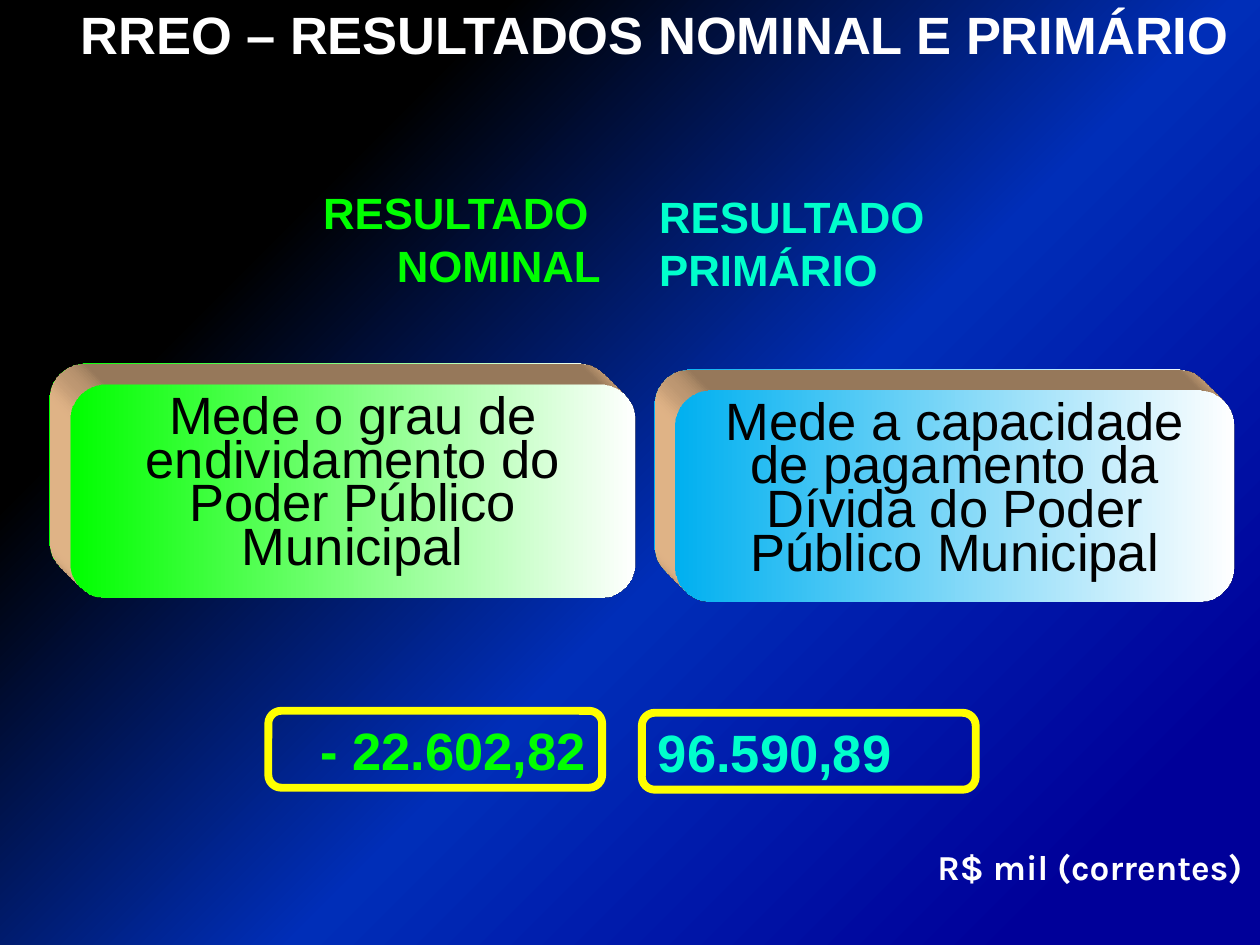
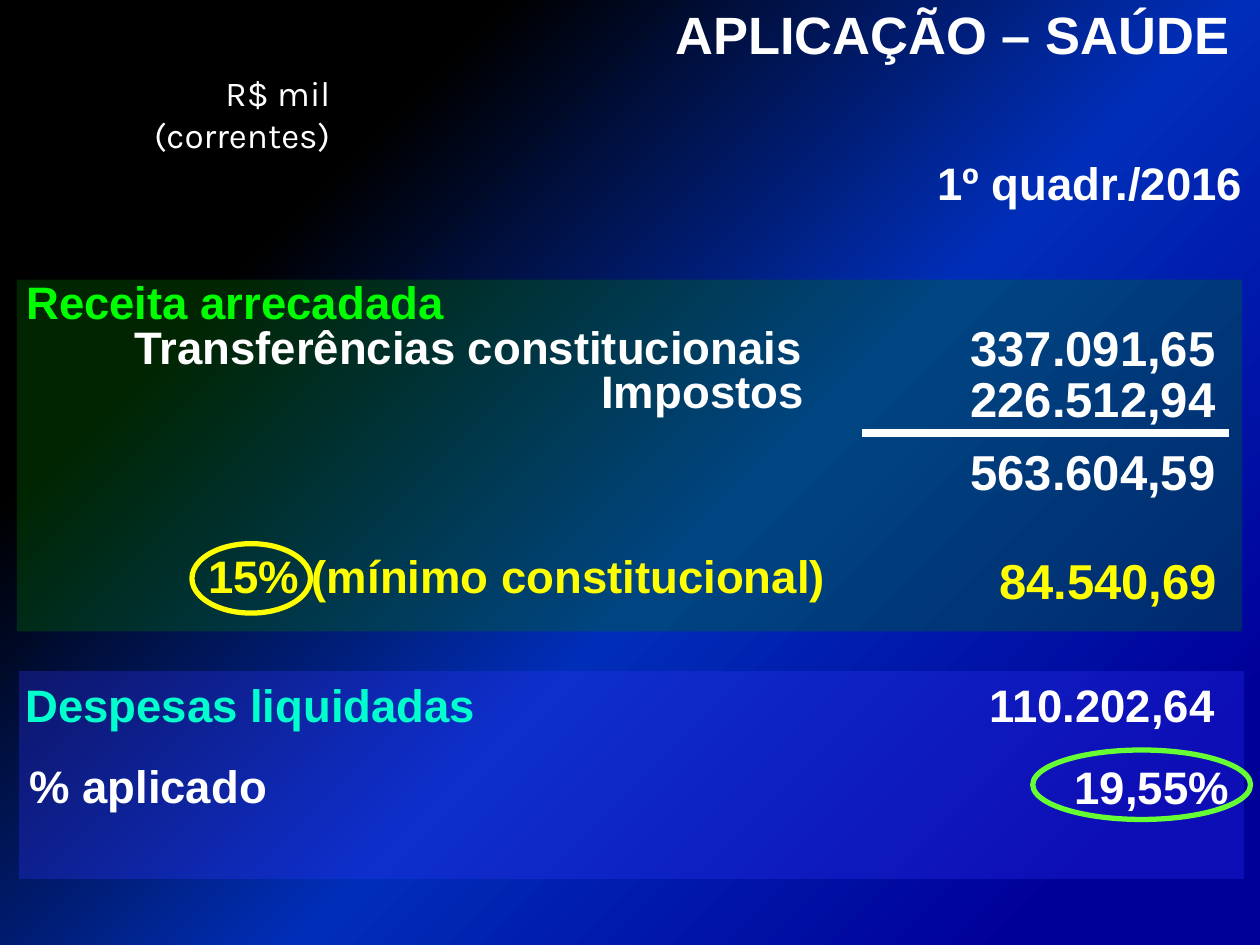
from lxml import etree
from pptx import Presentation
from pptx import util as u
from pptx.dml.color import RGBColor
from pptx.enum import shapes, text as t
from pptx.oxml import ns

COLORS = {
    "white": "FFFFFF", "black": "000000", "yellow": "FFFF00",
    "green": "00FF00", "aqua": "00FFCC", "sky": "00B0F0",
    "lime": "66FF33", "dark_green": "008000", "violet": "3333FF",
    "blue": "002EB8", "navy": "000099", "peach": "FFCC99",
}
CORNER = 0.167


def add_child(parent, tag, **attributes):
    return etree.SubElement(parent, ns.qn(tag), **attributes)


def set_gradient(fill, element, stops, angle=0):
    fill.gradient()
    fill.gradient_angle = angle
    stop_list = element.find(".//" + ns.qn("a:gsLst"))
    for stop in list(stop_list):
        stop_list.remove(stop)
    for position, color in stops:
        stop = add_child(stop_list, "a:gs", pos=str(position * 1000))
        add_child(stop, "a:srgbClr", val=COLORS[color])


def extrude(shape, depth, color):
    properties = shape.element.spPr
    scene = add_child(properties, "a:scene3d")
    add_child(scene, "a:camera", prst="legacyObliqueTopLeft")
    add_child(scene, "a:lightRig", rig="legacyFlat3", dir="b")
    body = add_child(properties, "a:sp3d", extrusionH=str(depth),
                     prstMaterial="legacyMatte")
    for bevel in ("a:bevelT", "a:bevelB"):
        add_child(body, bevel, w="13500", h="13500", prst="angle")
    side = add_child(body, "a:extrusionClr")
    add_child(side, "a:srgbClr", val=COLORS[color])


def write_text(frame, text, size=26, color="white", bold=True, font="Arial",
               align="LEFT", anchor="TOP", wrap=True, spacing=None, fit="NONE"):
    frame.word_wrap = wrap
    frame.auto_size = getattr(t.MSO_AUTO_SIZE, fit)
    frame.vertical_anchor = getattr(t.MSO_ANCHOR, anchor)
    for index, line in enumerate(text.split("\n")):
        paragraph = frame.add_paragraph() if index else frame.paragraphs[0]
        paragraph.alignment = getattr(t.PP_ALIGN, align)
        if spacing:
            paragraph.line_spacing = spacing
        run = paragraph.add_run()
        run.text = line
        run.font.name = font
        run.font.size = u.Pt(size)
        run.font.bold = bold
        run.font.color.rgb = RGBColor.from_string(COLORS[color])


class Deck:
    def __init__(self):
        self.presentation = Presentation()
        self.presentation.slide_width = u.Cm(25.4)
        self.presentation.slide_height = u.Cm(19.05)
        master = self.presentation.slide_master
        set_gradient(master.background.fill, master.element,
                     [(23, "black"), (56, "blue"), (89, "navy")], 315)
        self.slide = None

    def new_slide(self, title):
        layout = self.presentation.slide_layouts.get_by_name("Title Only")
        self.slide = self.presentation.slides.add_slide(layout)
        shape = self.slide.shapes.title
        shape.left, shape.top = u.Cm(0), u.Cm(-0.08)
        shape.width, shape.height = u.Cm(25.04), u.Cm(1.55)
        write_text(shape.text_frame, title, size=30, align="RIGHT")

    def text(self, box, text, **style):
        shape = self.slide.shapes.add_textbox(*map(u.Cm, box))
        write_text(shape.text_frame, text, fit="SHAPE_TO_FIT_TEXT", **style)

    def shape(self, kind, box, fill=None, alpha=None, line=None, width=3):
        shape = self.slide.shapes.add_shape(
            getattr(shapes.MSO_SHAPE, kind), *map(u.Cm, box))
        shape.shadow.inherit = False
        if kind == "ROUNDED_RECTANGLE":
            shape.adjustments[0] = CORNER
        if fill:
            shape.fill.solid()
            shape.fill.fore_color.rgb = RGBColor.from_string(COLORS[fill])
        else:
            shape.fill.background()
        if alpha:
            color = shape.element.spPr.find(".//" + ns.qn("a:srgbClr"))
            add_child(color, "a:alpha", val=str(alpha * 1000))
        if line:
            shape.line.color.rgb = RGBColor.from_string(COLORS[line])
            shape.line.width = u.Pt(width)
        else:
            shape.line.fill.background()
        return shape

    def label(self, box, text, line=None, **style):
        shape = self.shape("ROUNDED_RECTANGLE", box, line=line, width=4.5)
        write_text(shape.text_frame, text, anchor="MIDDLE", wrap=False, **style)

    def card(self, box, text, color):
        shape = self.shape("ROUNDED_RECTANGLE", box)
        set_gradient(shape.fill, shape.element, [(0, color), (100, "white")])
        extrude(shape, 430000, "peach")
        write_text(shape.text_frame, text, size=30, color="black", bold=False,
                   align="CENTER", spacing=u.Pt(25))

    def line(self, start, end, color, width):
        points = map(u.Cm, (*start, *end))
        line = self.slide.shapes.add_connector(shapes.MSO_CONNECTOR.STRAIGHT, *points)
        line.line.color.rgb = RGBColor.from_string(COLORS[color])
        line.line.width = u.Pt(width)
        add_child(line.element.spPr, "a:effectLst")

    def unit(self, box, bold):
        self.text(box, "R$ mil (correntes)", size=20, font="Karla",
                  bold=bold, align="RIGHT")


def build_results(deck):
    deck.new_slide("RREO – RESULTADOS NOMINAL E PRIMÁRIO")
    nominal = {"color": "green", "align": "RIGHT"}
    primary = {"color": "aqua"}
    deck.label((5.48, 3.46, 7.01, 2.69), "RESULTADO \nNOMINAL", size=25, **nominal)
    deck.label((12.9, 3.45, 7.47, 2.87), "RESULTADO\nPRIMÁRIO", size=25, **primary)
    deck.label((5.41, 14.33, 6.73, 1.55), "- 22.602,82", line="yellow", size=30, **nominal)
    deck.label((12.94, 14.37, 6.73, 1.55), "96.590,89", line="yellow", size=30, **primary)
    deck.card((13.61, 7.87, 11.28, 4.25),
              "Mede a capacidade de pagamento da Dívida do Poder Público Municipal", "sky")
    deck.card((1.42, 7.75, 11.39, 4.3),
              "Mede o grau de endividamento do Poder Público Municipal", "green")
    deck.unit((18.26, 16.92, 7.04, 1.12), bold=True)


def build_health(deck):
    deck.new_slide("APLICAÇÃO – SAÚDE")
    deck.shape("RECTANGLE", (0.38, 13.53, 24.7, 4.19), fill="violet", alpha=29)
    deck.shape("RECTANGLE", (0.34, 5.64, 24.7, 7.09), fill="dark_green", alpha=29)
    deck.unit((0.71, 1.32, 6.2, 1.12), bold=False)
    deck.text((18.09, 3.3, 7.21, 1.04), "1º quadr./2016", align="RIGHT", spacing=0.7)

    deck.text((0.28, 5.7, 11, 1.04), "Receita arrecadada", color="green", spacing=0.7)
    deck.text((2.29, 6.3, 14.4, 1.35), "Transferências constitucionais ", align="RIGHT")
    deck.text((11.51, 7.19, 5.2, 1.35), "Impostos ", align="RIGHT")
    revenues = [(6.27, "337.091,65"), (7.31, "226.512,94"), (8.77, "563.604,59")]
    for top, revenue in revenues:
        deck.text((18.3, top, 6.45, 1.45), revenue, size=28, align="RIGHT")
    deck.line((17.37, 8.73), (24.78, 8.73), "white", 4.5)

    minimum = {"color": "yellow", "align": "RIGHT"}
    deck.text((0.7, 10.92, 16.2, 1.35), "15% (mínimo constitucional)", **minimum)
    deck.text((18.58, 10.97, 6.2, 1.45), "84.540,69", size=28, **minimum)
    deck.shape("OVAL", (3.87, 10.96, 2.39, 1.4), line="yellow")

    deck.text((0.26, 13.53, 10, 1.35), "Despesas liquidadas", color="aqua")
    deck.text((18.54, 13.53, 6.2, 1.35), "110.202,64", align="RIGHT")
    deck.text((0.34, 15.16, 13.41, 1.35), "% aplicado")
    deck.text((20.23, 15.17, 4.8, 1.35), "19,55%", align="RIGHT")
    deck.shape("OVAL", (20.82, 15.12, 4.39, 1.4), line="lime")


def main():
    deck = Deck()
    build_results(deck)
    build_health(deck)
    deck.presentation.save("out.pptx")


if __name__ == "__main__":
    main()
